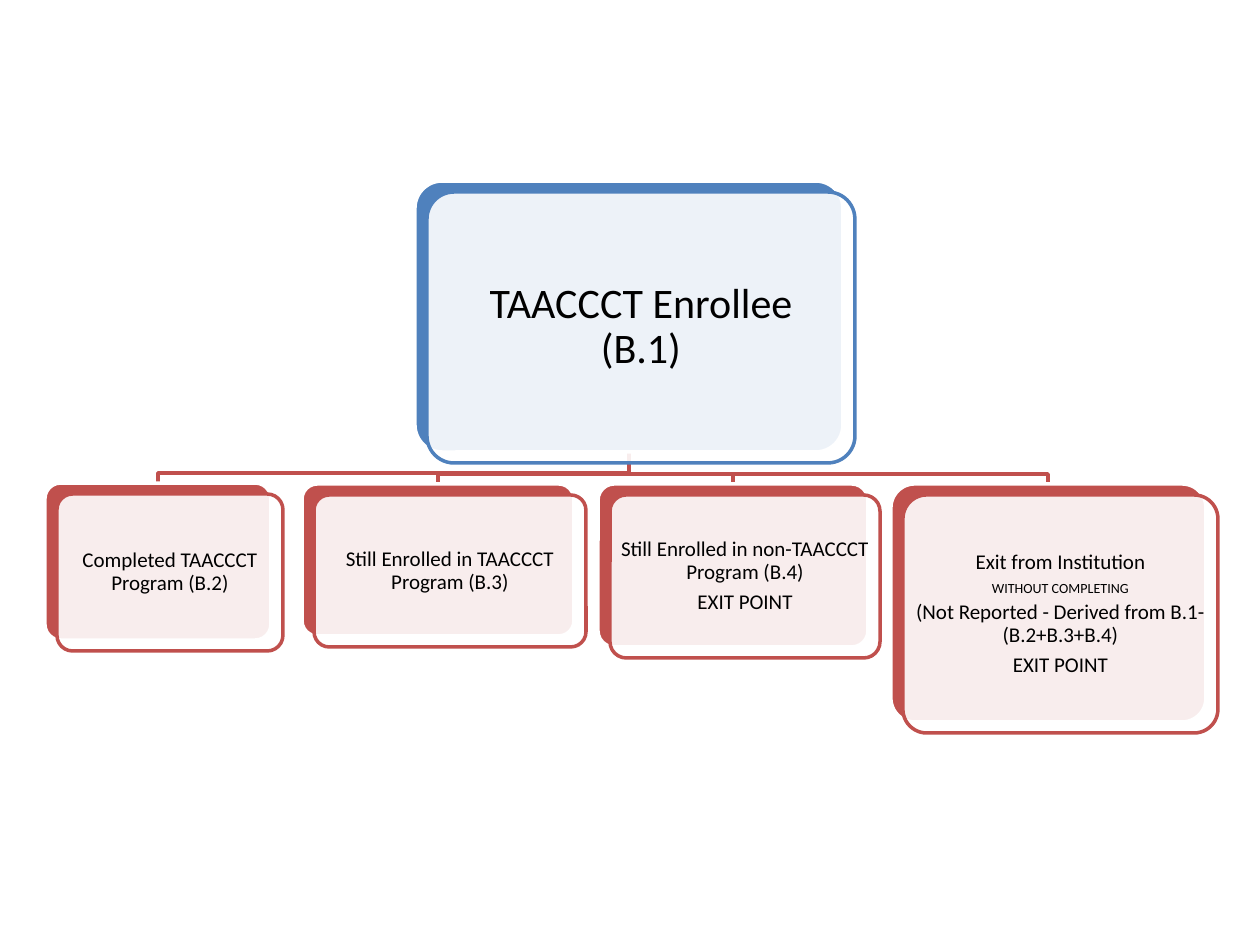
from pptx import Presentation
from pptx import util as u
from pptx.dml.color import RGBColor
from pptx.enum import shapes, text
from pptx.oxml.ns import qn
from lxml import etree

SCALE = 914400 / 126  # EMU per px
COLORS = {"root": "4F81BD", "child": "C0504D", "paper": "FFFFFF", "ink": "000000"}
FONT = "Calibri"
CORNER = 0.1
SHIFT_X, SHIFT_Y = 12, 11  # front card relative to back card

# Each box is left, top, width, height of the back card
ENROLLEE = ((415, 181, 428, 271), [("TAACCCT Enrollee (B.1)", 24)])
OUTCOMES = [
    ((45, 483, 226, 157), [("Completed TAACCCT Program (B.2)", 12)]),
    ((302, 484, 272, 152), [("Still Enrolled in TAACCCT Program (B.3)", 12)]),
    ((598, 484, 270, 163), [("Still Enrolled in non-TAACCCT Program (B.4)", 12),
                            ("EXIT POINT", 12)]),
    ((891, 484, 315, 238), [("Exit from Institution", 12),
                            ("WITHOUT COMPLETING", 8),
                            ("(Not Reported - Derived from B.1-(B.2+B.3+B.4)", 12),
                            ("EXIT POINT", 12)]),
]


def px(length):
    return u.Emu(round(length * SCALE))


def rgb(name):
    return RGBColor.from_string(COLORS[name])


def add_card(slide, box, fill, outline, opacity=100):
    card = slide.shapes.add_shape(shapes.MSO_SHAPE.ROUNDED_RECTANGLE, *map(px, box))
    card.adjustments[0] = CORNER
    card.shadow.inherit = False
    card.fill.solid()
    card.fill.fore_color.rgb = rgb(fill)
    card.line.color.rgb = rgb(outline)
    card.line.width = u.Pt(2)
    if opacity < 100:
        color = card.fill._xPr.find(qn("a:solidFill"))[0]
        etree.SubElement(color, qn("a:alpha")).set("val", str(opacity * 1000))


def add_label(slide, box, lines, margin):
    label = slide.shapes.add_textbox(*map(px, box)).text_frame
    label.word_wrap = True
    label.vertical_anchor = text.MSO_ANCHOR.MIDDLE
    label.margin_left = label.margin_right = px(margin)
    label.margin_top = label.margin_bottom = px(margin)
    for index, (wording, size) in enumerate(lines):
        line = label.add_paragraph() if index else label.paragraphs[0]
        line.alignment = text.PP_ALIGN.CENTER
        line.line_spacing = 0.9
        line.space_after = u.Pt(0.35 * size)
        run = line.add_run()
        run.text = wording
        run.font.name = FONT
        run.font.size = u.Pt(size)
        run.font.color.rgb = rgb("ink")


def add_node(slide, box, lines, accent, margin):
    left, top, width, height = box
    front_left, front_top = left + SHIFT_X, top + SHIFT_Y
    add_card(slide, box, accent, "paper")
    add_card(slide, (front_left, front_top, width, height), "paper", accent, 90)
    # The label keeps clear of the rounded corners
    inset = round(0.29 * CORNER * min(width, height))
    add_label(slide, (front_left + inset, front_top + inset,
                      width - 2 * inset, height - 2 * inset), lines, margin)


def add_branch(slide, parent, child):
    left, top, width, height = parent
    start_x, start_y = left + width // 2, top + height
    end_x, end_y = child[0] + child[2] // 2, child[1]
    bar_y = end_y - 10
    builder = slide.shapes.build_freeform(start_x, start_y, scale=SCALE)
    builder.add_line_segments(
        [(start_x, bar_y), (end_x, bar_y), (end_x, end_y)], close=False)
    branch = builder.convert_to_shape()
    branch.shadow.inherit = False
    branch.fill.background()
    branch.line.color.rgb = rgb("child")
    branch.line.width = u.Pt(2)


def add_hierarchy(slide):
    root_box, root_lines = ENROLLEE
    # Branches lie behind the cards
    for box, _ in reversed(OUTCOMES):
        add_branch(slide, root_box, box)
    # Enrollee, then the four outcomes
    add_node(slide, root_box, root_lines, "root", 12)
    for box, lines in OUTCOMES:
        add_node(slide, box, lines, "child", 6)


def main():
    deck = Presentation()
    deck.slide_width, deck.slide_height = px(1260), px(945)
    add_hierarchy(deck.slides.add_slide(deck.slide_layouts[6]))
    deck.save("out.pptx")


if __name__ == "__main__":
    main()
